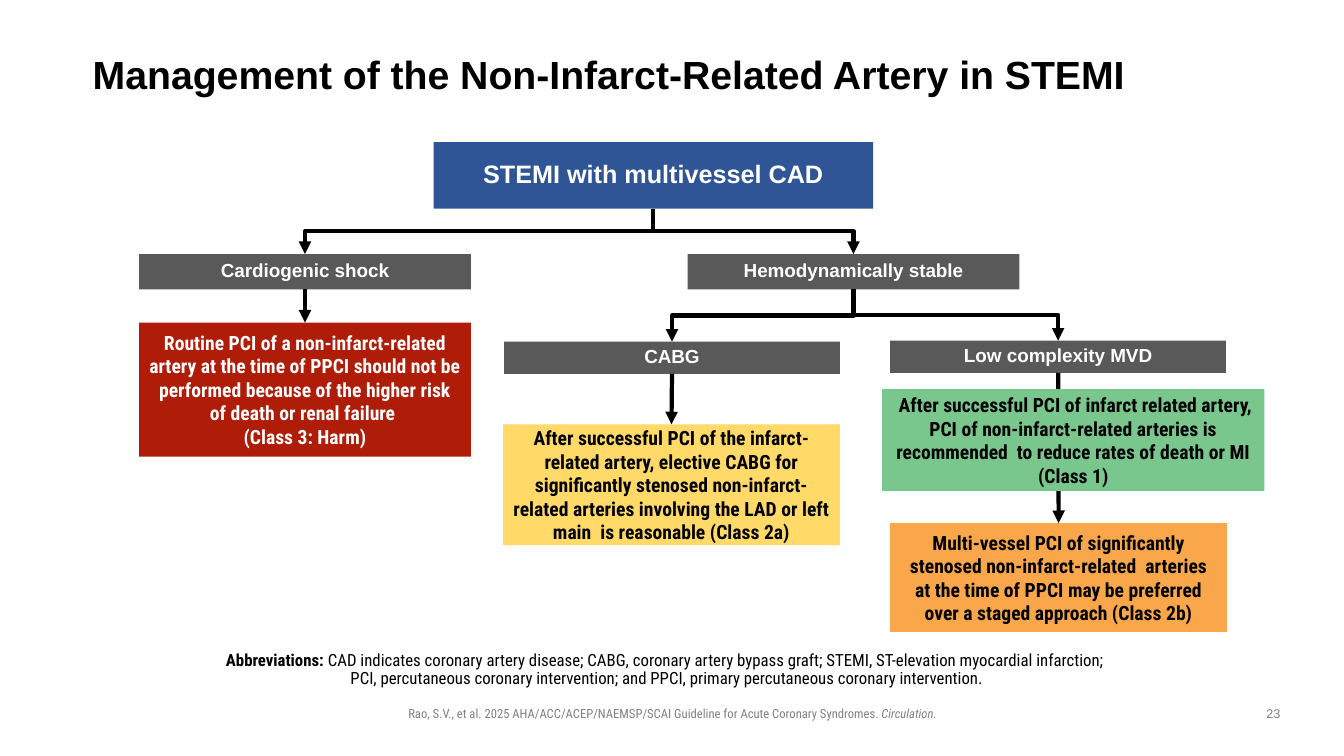
from lxml import etree
from pptx import Presentation
from pptx.dml.color import RGBColor
from pptx.enum.shapes import MSO_CONNECTOR, MSO_SHAPE
from pptx.enum.text import MSO_ANCHOR, PP_ALIGN
from pptx.oxml.ns import qn
from pptx.util import Inches, Pt

RECTANGLE = MSO_SHAPE.RECTANGLE
STRAIGHT, ELBOW = MSO_CONNECTOR.STRAIGHT, MSO_CONNECTOR.ELBOW
LEFT, CENTER = PP_ALIGN.LEFT, PP_ALIGN.CENTER
TOP, MIDDLE, BOTTOM = MSO_ANCHOR.TOP, MSO_ANCHOR.MIDDLE, MSO_ANCHOR.BOTTOM
SIDE_TOP, SIDE_BOTTOM = 0, 2
HEADING_FONT, BODY_FONT = "Arial", "Roboto Condensed"
COLORS = {
    "black": "000000", "white": "FFFFFF", "muted": "808080",
    "blue": "2F5597", "gray": "595959", "red": "AF1C08",
    "yellow": "FFDA68", "green": "79C78D", "orange": "FAA74B",
}

deck = Presentation()
deck.slide_width, deck.slide_height = Inches(13.33), Inches(7.5)
page = deck.slides.add_slide(deck.slide_layouts[6])


def write(shape, text, size=14, font=BODY_FONT, color="black", bold=False, italic=False,
          align=CENTER, anchor=MIDDLE, spacing=None, margins=None, new_paragraph=False):
    """Append one span of text to the shape; a newline becomes a line break."""
    frame = shape.text_frame
    frame.word_wrap = True
    frame.vertical_anchor = anchor
    if margins:
        (frame.margin_left, frame.margin_top,
         frame.margin_right, frame.margin_bottom) = [Inches(m) for m in margins]
    paragraph = frame.add_paragraph() if new_paragraph else frame.paragraphs[-1]
    paragraph.alignment = align
    paragraph.line_spacing = spacing
    for index, line in enumerate(text.split("\n")):
        if index:
            paragraph.add_line_break()
        span = paragraph.add_run()
        span.text = line
        span.font.name, span.font.size = font, Pt(size)
        span.font.bold, span.font.italic = bold, italic
        span.font.color.rgb = RGBColor.from_string(COLORS[color])


def connect(kind, start, end):
    """Draw an arrow from the bottom of one box to the top of another."""
    arrow = page.shapes.add_connector(kind, 0, 0, 0, 0)
    arrow.begin_connect(start, SIDE_BOTTOM)
    arrow.end_connect(end, SIDE_TOP)
    arrow.line.width = Pt(3)
    arrow.line.color.rgb = RGBColor.from_string(COLORS["black"])
    properties = arrow._element.spPr
    etree.SubElement(arrow.line._get_or_add_ln(), qn("a:tailEnd"), type="triangle")
    etree.SubElement(properties, qn("a:effectLst"))
    if kind == ELBOW:
        # Turn the elbow so that it leaves and arrives vertically
        across, down = end.left + end.width // 2 - start.left - start.width // 2, \
            end.top - start.top - start.height
        middle_x = start.left + start.width // 2 + across // 2
        middle_y = start.top + start.height + down // 2
        arrow.width, arrow.height = down, abs(across)
        arrow.left, arrow.top = middle_x - down // 2, middle_y - abs(across) // 2
        transform = properties.find(qn("a:xfrm"))
        transform.set("rot", str((90 if across < 0 else 270) * 60000))
        transform.set("flipH", "0" if across < 0 else "1")


# Title, abbreviations, citation and page number
no_margins = (0, 0, 0, 0)
title = page.shapes.add_textbox(Inches(0.92), Inches(0.4), Inches(10.9), Inches(0.72))
write(title, "Management of the Non-Infarct-Related Artery in STEMI", size=28,
      font=HEADING_FONT, bold=True, align=LEFT, spacing=0.9, margins=no_margins)

abbreviations = page.shapes.add_textbox(Inches(1.47), Inches(6.42), Inches(10.39), Inches(0.46))
note_format = dict(size=12, anchor=BOTTOM, spacing=0.9, margins=(0, 0.05, 0.1, 0.05))
write(abbreviations, "Abbreviations: ", bold=True, **note_format)
write(abbreviations, "CAD indicates coronary artery disease; CABG, coronary artery bypass graft; "
      "STEMI, ST-elevation myocardial infarction; \nPCI, percutaneous coronary intervention; "
      "and PPCI, primary percutaneous coronary intervention.", **note_format)

footer_format = dict(size=9, color="muted", anchor=TOP)
citation = page.shapes.add_textbox(Inches(2.36), Inches(6.95), Inches(8.62), Inches(0.25))
write(citation, "Rao, S.V., et al. 2025 AHA/ACC/ACEP/NAEMSP/SCAI Guideline for Acute "
      "Coronary Syndromes. ", **footer_format)
write(citation, "Circulation.", italic=True, **footer_format)
page_number = page.shapes.add_textbox(Inches(12.42), Inches(6.95), Inches(0.42), Inches(0.26))
write(page_number, "23", font=HEADING_FONT, **footer_format)

# Boxes of the decision tree: left, top, width, height, fill
layout = {
    "start": (4.3, 1.41, 4.36, 0.66, "blue"),
    "shock": (1.38, 2.52, 3.29, 0.35, "gray"),
    "stable": (6.82, 2.52, 3.29, 0.35, "gray"),
    "bypass": (5, 3.39, 3.33, 0.32, "gray"),
    "low": (8.83, 3.38, 3.33, 0.32, "gray"),
    "harm": (1.38, 3.2, 3.29, 1.33, "red"),
    "class 2a": (4.99, 4.21, 3.34, 1.2, "yellow"),
    "class 2b": (8.83, 5.19, 3.34, 1.08, "orange"),
    "class 1": (8.75, 3.86, 3.79, 1.01, "green"),
}
boxes = {}
for name, (*place, fill) in layout.items():
    if name == "class 1":
        # The last box lies over the arrows
        for kind, start, end in [
            (ELBOW, "start", "shock"), (ELBOW, "start", "stable"),
            (ELBOW, "stable", "bypass"), (ELBOW, "stable", "low"),
            (STRAIGHT, "shock", "harm"), (STRAIGHT, "bypass", "class 2a"),
            (STRAIGHT, "low", "class 2b"),
        ]:
            connect(kind, boxes[start], boxes[end])
    box = page.shapes.add_shape(RECTANGLE, *[Inches(length) for length in place])
    box.shadow.inherit = False
    box.fill.solid()
    box.fill.fore_color.rgb = RGBColor.from_string(COLORS[fill])
    box.line.fill.background()
    boxes[name] = box

# Headings
for name, text, size in [
    ("start", "STEMI with multivessel CAD", 18),
    ("shock", "Cardiogenic shock", 13.5),
    ("stable", "Hemodynamically stable", 13.5),
    ("bypass", "CABG", 13.5),
    ("low", "Low complexity MVD", 13.5),
]:
    write(boxes[name], text, size=size, font=HEADING_FONT, color="white", bold=True,
          spacing=0.9, margins=no_margins)

# Recommendations
write(boxes["harm"], "Routine PCI of a non-infarct-related artery at the time of PPCI should not "
      "be performed because of the higher risk of death or renal failure ",
      color="white", bold=True)
write(boxes["harm"], "(Class 3: Harm)", color="white", bold=True, new_paragraph=True)
for name, text in [
    ("class 2a", "After successful PCI of the infarct-related artery, elective CABG for "
     "significantly stenosed non-infarct-related arteries involving the LAD or left main  "
     "is reasonable (Class 2a)"),
    ("class 2b", "Multi-vessel PCI of significantly stenosed non-infarct-related  arteries "
     "at the time of PPCI may be preferred over a staged approach (Class 2b)"),
    ("class 1", " After successful PCI of infarct related artery, PCI of non-infarct-related "
     "arteries is recommended  to reduce rates of death or MI (Class 1)"),
]:
    write(boxes[name], text, bold=True)

deck.save("out.pptx")
